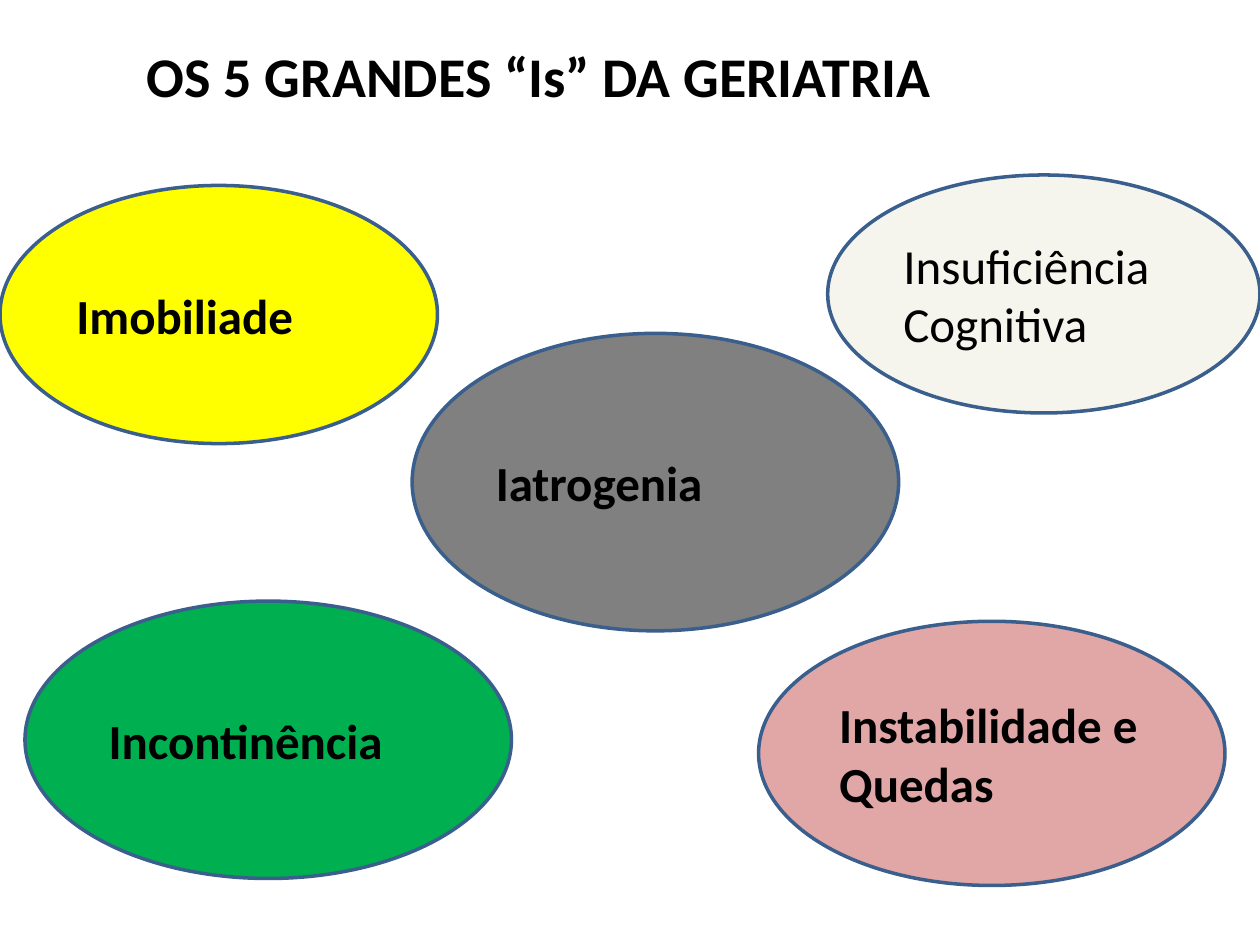
from dataclasses import dataclass

from pptx import Presentation
from pptx.dml.color import RGBColor
from pptx.enum import shapes, text
from pptx.util import Pt


@dataclass(frozen=True)
class Theme:
    face: str = "Calibri"
    ink: str = "000000"
    edge: str = "3A5F8C"
    head: float = 32
    body: float = 28
    rule: float = 2


@dataclass(frozen=True)
class Oval:
    label: str
    left: float
    top: float
    width: float
    height: float
    fill: str
    bold: bool = True


THEME = Theme()

OVALS = [
    Oval("Imobiliade", 0, 106, 250, 147.5, "FFFF00"),
    Oval("Incontinência", 14.25, 343.5, 278, 158.5, "00B050"),
    Oval("Iatrogenia", 235.5, 190.5, 278, 170, "808080"),
    Oval("Insuficiência Cognitiva", 473, 100, 247, 136, "F5F4ED", bold=False),
    Oval("Instabilidade e Quedas", 433.5, 355, 266.5, 151, "E0A7A6"),
]


def apply(item, values: dict) -> None:
    for name, value in values.items():
        setattr(item, name, value)


def place(shape, left: float, top: float, width: float, height: float) -> None:
    apply(shape, {"left": Pt(left), "top": Pt(top),
                  "width": Pt(width), "height": Pt(height)})


def write(shape, words: str, size: float, bold: bool) -> None:
    frame = shape.text_frame
    frame.text = words
    apply(frame, {"word_wrap": True, "auto_size": text.MSO_AUTO_SIZE.NONE,
                  "vertical_anchor": text.MSO_ANCHOR.MIDDLE})
    para = frame.paragraphs[0]
    para.alignment = text.PP_ALIGN.LEFT
    font = para.runs[0].font
    apply(font, {"name": THEME.face, "size": Pt(size), "bold": bold})
    font.color.rgb = RGBColor.from_string(THEME.ink)


def draw_title(slide, words: str) -> None:
    title = slide.shapes.title
    place(title, 48, 20, 496, 46)
    write(title, words, THEME.head, True)
    # The left inset sets the title in from its box
    apply(title.text_frame, {"margin_left": Pt(36), "margin_right": Pt(0)})


def draw_oval(slide, oval: Oval) -> None:
    box = (oval.left, oval.top, oval.width, oval.height)
    shape = slide.shapes.add_shape(shapes.MSO_SHAPE.OVAL, *map(Pt, box))
    shape.shadow.inherit = False
    shape.fill.solid()
    shape.fill.fore_color.rgb = RGBColor.from_string(oval.fill)
    shape.line.color.rgb = RGBColor.from_string(THEME.edge)
    shape.line.width = Pt(THEME.rule)
    write(shape, oval.label, THEME.body, oval.bold)


def main() -> None:
    deck = Presentation()
    apply(deck, {"slide_width": Pt(720), "slide_height": Pt(540)})
    slide = deck.slides.add_slide(deck.slide_layouts.get_by_name("Title Only"))

    # Heading
    draw_title(slide, "OS 5 GRANDES “Is” DA GERIATRIA")

    # The five syndromes, back to front
    for oval in OVALS:
        draw_oval(slide, oval)

    deck.save("out.pptx")


if __name__ == "__main__":
    main()
